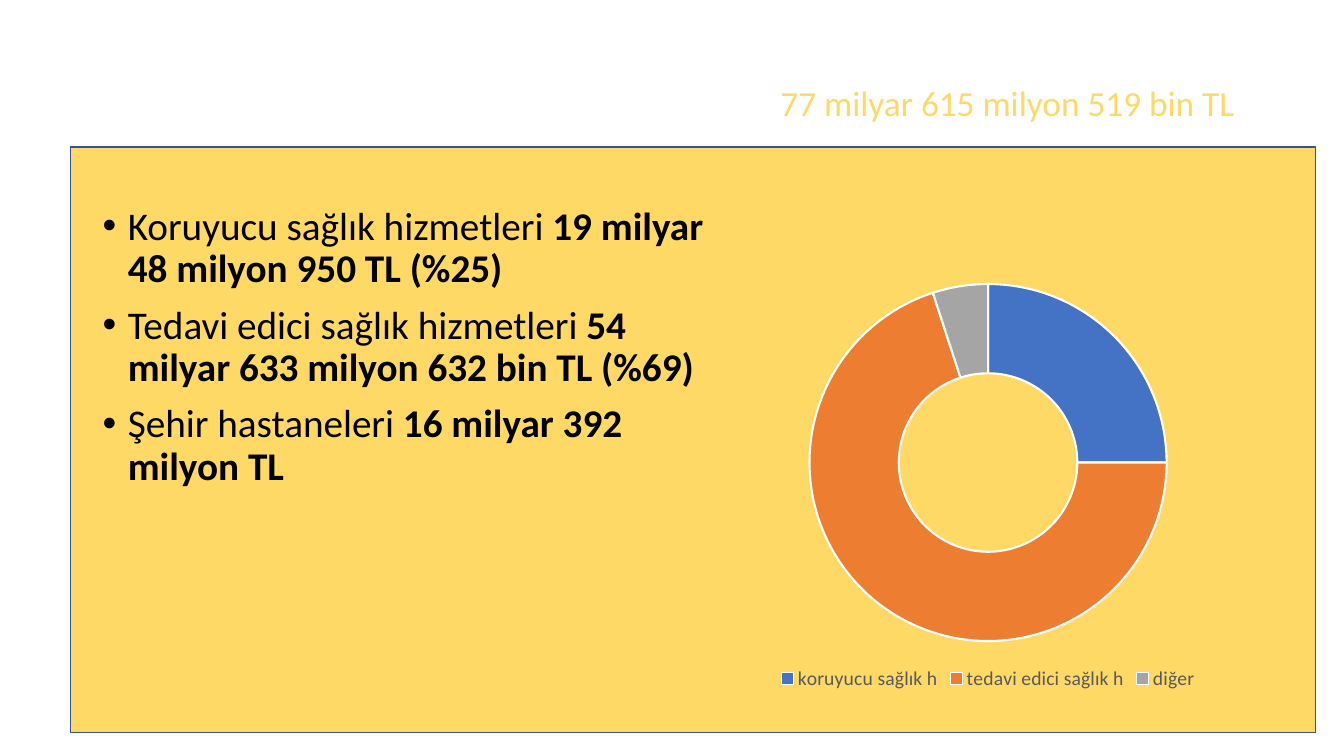
from pptx import Presentation
from pptx.chart.data import CategoryChartData
from pptx.dml.color import RGBColor
from pptx.enum import chart as ch, shapes, text
from pptx.oxml import parse_xml
from pptx.oxml.ns import nsdecls
from pptx.util import Inches, Pt

GOLD = "FFD966"
ITEMS = [
    ("Koruyucu sağlık hizmetleri ", "19 milyar 48 milyon 950 TL (%25)"),
    ("Tedavi edici sağlık hizmetleri ", "54 milyar 633 milyon 632 bin TL (%69)"),
    ("Şehir hastaneleri ", "16 milyar 392 milyon TL"),
]
SHARES = {"koruyucu sağlık h": 25, "tedavi edici sağlık h": 70, "diğer": 5}
HUES = ["4472C4", "ED7D31", "A5A5A5"]


def rgb(code):
    return RGBColor.from_string(code)


def apply(item, **vals):
    for key, val in vals.items():
        setattr(item, key, val)


def style(font, size, color, bold=False):
    apply(font, name="Calibri", size=Pt(size), bold=bold)
    font.color.rgb = rgb(color)


def paint(fmt, fill, line, width):
    fmt.fill.solid()
    fmt.fill.fore_color.rgb = rgb(fill)
    fmt.line.color.rgb = rgb(line)
    fmt.line.width = Pt(width)


def add_title(slide, words, box):
    title = slide.shapes.title
    apply(title, **box)
    frame = title.text_frame
    frame.text = words
    apply(frame, word_wrap=True, auto_size=text.MSO_AUTO_SIZE.NONE,
          vertical_anchor=text.MSO_ANCHOR.MIDDLE)
    para = frame.paragraphs[0]
    apply(para, alignment=text.PP_ALIGN.LEFT, line_spacing=0.9)
    style(para.runs[0].font, 25.2, GOLD)


def add_panel(slide, box):
    panel = slide.shapes.add_shape(shapes.MSO_SHAPE.RECTANGLE, *box.values())
    panel.shadow.inherit = False
    paint(panel, GOLD, "325491", 1)


def add_bullet(para):
    props = para._p.get_or_add_pPr()
    indent = Inches(0.25)
    props.set("marL", str(indent))
    props.set("indent", str(-indent))
    for tag in ('buFont typeface="Arial"', 'buChar char="•"'):
        props.append(parse_xml(f"<a:{tag} {nsdecls('a')}/>"))


def add_list(slide, items, box):
    frame = slide.shapes.add_textbox(*box.values()).text_frame
    frame.word_wrap = True
    for num, (label, sum_) in enumerate(items):
        para = frame.add_paragraph() if num else frame.paragraphs[0]
        add_bullet(para)
        apply(para, line_spacing=0.9, space_before=Pt(10 if num else 0))
        for words, bold in ((label, False), (sum_, True)):
            run = para.add_run()
            run.text = words
            style(run.font, 28, "000000", bold)


def add_ring(slide, shares, box):
    data = CategoryChartData()
    data.categories = list(shares)
    data.add_series("Series 1", list(shares.values()))
    chart = slide.shapes.add_chart(
        ch.XL_CHART_TYPE.DOUGHNUT, *box.values(), data).chart
    style(chart.font, 10, "000000")
    apply(chart, has_title=False, has_legend=True)
    apply(chart.legend, position=ch.XL_LEGEND_POSITION.BOTTOM,
          include_in_layout=False)
    style(chart.legend.font, 14, "595959")
    plot = chart.plots[0]
    plot.vary_by_categories = True
    for num, hue in enumerate(HUES):
        paint(plot.series[0].points[num].format, hue, "FFFFFF", 1.5)


def place(left, top, width, height):
    return {"left": Inches(left), "top": Inches(top),
            "width": Inches(width), "height": Inches(height)}


def main():
    prs = Presentation()
    apply(prs, slide_width=Inches(13.33), slide_height=Inches(7.5))
    slide = prs.slides.add_slide(prs.slide_layouts[5])
    add_title(slide, "77 milyar 615 milyon 519 bin TL", place(7.64, 0.61, 4.71, 0.86))
    add_panel(slide, place(0.7, 1.46, 12.35, 5.81))
    add_list(slide, ITEMS, place(0.92, 2, 6.37, 4.76))
    add_ring(slide, SHARES, place(6.67, 2.68, 6.26, 4.21))
    prs.save("out.pptx")


if __name__ == "__main__":
    main()
